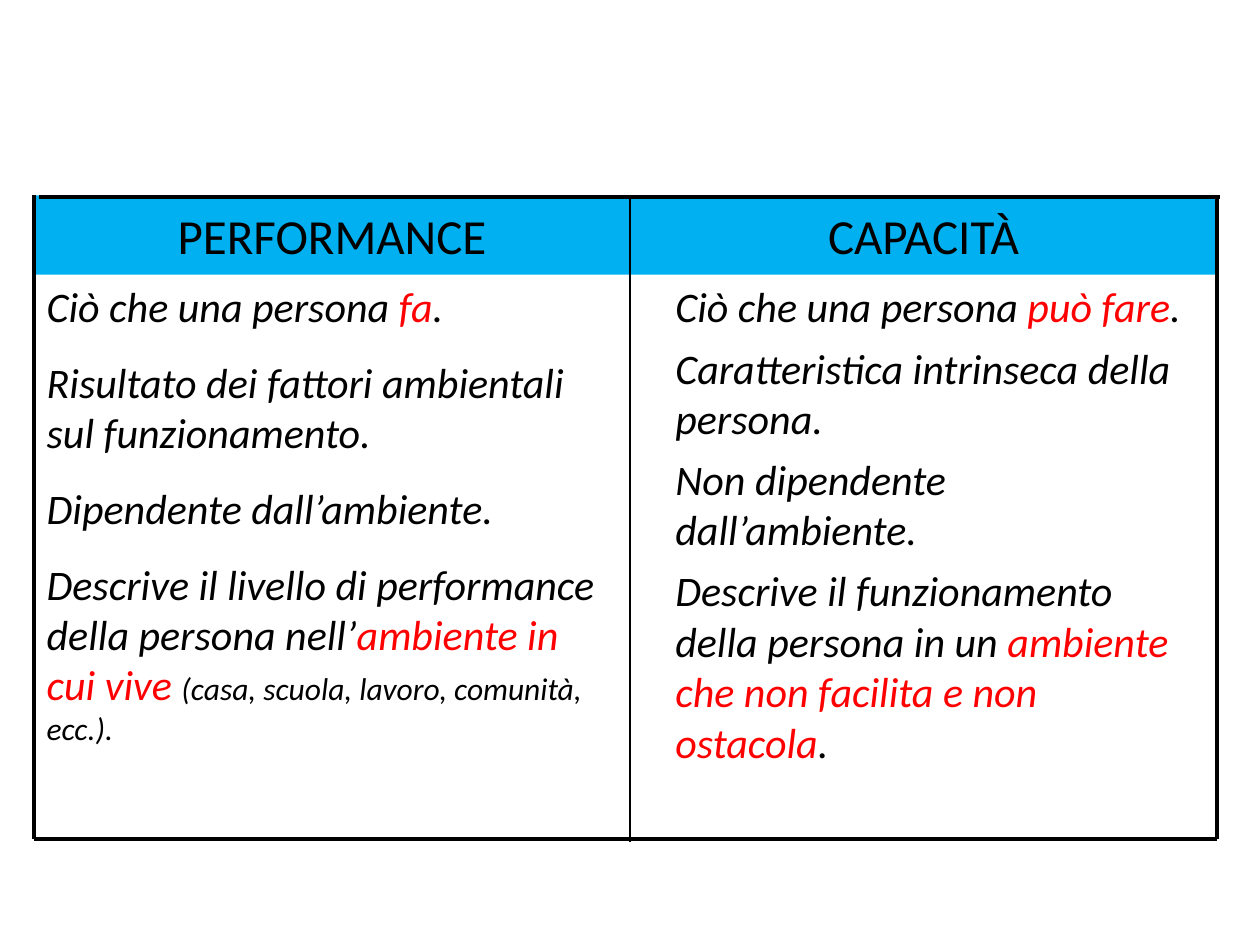
from dataclasses import dataclass

from lxml import etree
from pptx import Presentation
from pptx import util as u
from pptx.dml.color import RGBColor
from pptx.enum import shapes, text
from pptx.oxml.ns import qn


@dataclass(frozen=True)
class Theme:
    font: str = "Calibri"
    ink: RGBColor = RGBColor(0, 0, 0)
    accent: RGBColor = RGBColor(0xFF, 0, 0)
    band: RGBColor = RGBColor(0, 0xB0, 0xF0)
    heading: int = 28
    body: int = 24
    aside: int = 18
    frame: float = 2.25
    divider: float = 1


THEME = Theme()
RUN_STYLES = {
    "plain": (THEME.ink, THEME.body),
    "key": (THEME.accent, THEME.body),
    "aside": (THEME.ink, THEME.aside),
}

# Each statement is a list of (wording, run style)
COLUMNS = [
    {
        "heading": "PERFORMANCE",
        "gap": 14.4,
        "inset": 0.1,
        "body": (0.27, 4.57),
        "statements": [
            [("Ciò che una persona ", "plain"), ("fa", "key"), (".", "plain")],
            [("Risultato dei fattori ambientali sul funzionamento.", "plain")],
            [("Dipendente dall’ambiente.", "plain")],
            [("Descrive il livello di performance della persona nell’", "plain"),
             ("ambiente in cui vive ", "key"),
             ("(casa, scuola, lavoro, comunità, ecc.).", "aside")],
        ],
    },
    {
        "heading": "CAPACITÀ",
        "gap": 6.1,
        "inset": 0.28,
        "body": (5.08, 4.49),
        "statements": [
            [("Ciò che una persona ", "plain"), ("può fare", "key"), (".", "plain")],
            [("Caratteristica intrinseca della persona.", "plain")],
            [("Non dipendente dall’ambiente.", "plain")],
            [("Descrive il funzionamento della persona in un ", "plain"),
             ("ambiente che non facilita e non ostacola", "key"), (".", "plain")],
        ],
    },
]

# Grid of the comparison, in inches
LEFT, MIDDLE, RIGHT = 0.27, 5, 9.66
TOP, HEADER_BOTTOM, BOTTOM = 1.55, 2.18, 6.66
BODY_HEIGHT = 4.33
EDGES = [LEFT, MIDDLE, RIGHT]
RULES = [
    ((LEFT + 0.04, TOP + 0.01), (RIGHT + 0.02, TOP + 0.01), THEME.frame),
    ((LEFT, BOTTOM), (RIGHT, BOTTOM), THEME.frame),
    ((LEFT, TOP), (LEFT, BOTTOM), THEME.frame),
    ((RIGHT, TOP), (RIGHT, BOTTOM), THEME.frame),
    ((MIDDLE, TOP), (MIDDLE, BOTTOM + 0.02), THEME.divider),
]


def place(shape, left, top, width, height):
    shape.left, shape.top = u.Inches(left), u.Inches(top)
    shape.width, shape.height = u.Inches(width), u.Inches(height)


def remove_bullet(paragraph):
    properties = paragraph._p.get_or_add_pPr()
    properties.set("marL", "0")
    properties.set("indent", "0")
    etree.SubElement(properties, qn("a:buNone"))


def add_header(slide, heading, left, right):
    header = slide.shapes.add_shape(
        shapes.MSO_SHAPE.RECTANGLE, u.Inches(left), u.Inches(TOP),
        u.Inches(right - left), u.Inches(HEADER_BOTTOM - TOP))
    header.shadow.inherit = False
    header.fill.solid()
    header.fill.fore_color.rgb = THEME.band
    header.line.fill.background()
    header.text_frame.vertical_anchor = text.MSO_ANCHOR.MIDDLE
    label = header.text_frame.paragraphs[0]
    label.text = heading
    label.alignment = text.PP_ALIGN.CENTER
    label.font.name, label.font.size = THEME.font, u.Pt(THEME.heading)
    label.font.color.rgb = THEME.ink


def fill_body(body, column):
    left, width = column["body"]
    place(body, left, HEADER_BOTTOM, width, BODY_HEIGHT)
    frame = body.text_frame
    frame.word_wrap = True
    frame.auto_size = text.MSO_AUTO_SIZE.NONE
    frame.vertical_anchor = text.MSO_ANCHOR.TOP
    frame.margin_left, frame.margin_right = u.Inches(column["inset"]), u.Inches(0.08)
    frame.margin_top = frame.margin_bottom = u.Inches(0.05)
    for index, statement in enumerate(column["statements"]):
        paragraph = frame.add_paragraph() if index else frame.paragraphs[0]
        paragraph.space_before = u.Pt(column["gap"] if index else 0)
        remove_bullet(paragraph)
        paragraph.font.name, paragraph.font.italic = THEME.font, True
        for wording, style in statement:
            run = paragraph.add_run()
            run.text = wording
            color, size = RUN_STYLES[style]
            run.font.color.rgb, run.font.size = color, u.Pt(size)


def add_rule(slide, start, end, weight):
    rule = slide.shapes.add_connector(
        shapes.MSO_CONNECTOR.STRAIGHT, *(u.Inches(v) for v in start + end))
    rule.line.color.rgb = THEME.ink
    rule.line.width = u.Pt(weight)
    etree.SubElement(rule._element.spPr, qn("a:effectLst"))


def main():
    deck = Presentation()
    deck.slide_width, deck.slide_height = u.Inches(10), u.Inches(7.5)
    slide = deck.slides.add_slide(deck.slide_layouts.get_by_name("Two Content"))
    title, *bodies = slide.placeholders
    title._element.getparent().remove(title._element)
    for column, body, left, right in zip(COLUMNS, bodies, EDGES, EDGES[1:]):
        fill_body(body, column)
        add_header(slide, column["heading"], left, right)
    for rule in RULES:
        add_rule(slide, *rule)
    deck.save("out.pptx")


if __name__ == "__main__":
    main()
